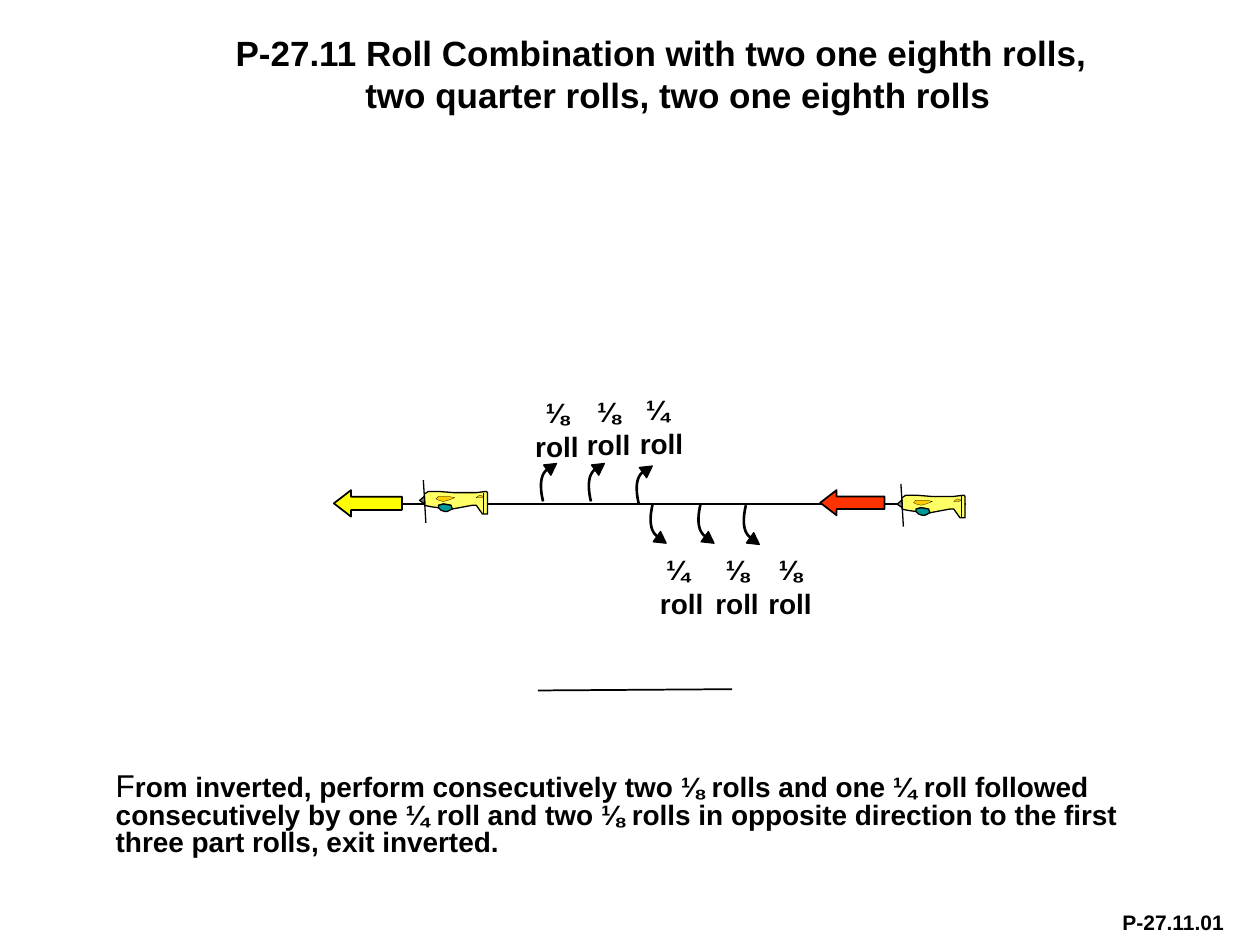
from lxml.etree import SubElement
from pptx import Presentation
from pptx.dml.color import RGBColor
from pptx.enum.shapes import MSO_CONNECTOR, MSO_SHAPE
from pptx.enum.text import PP_ALIGN
from pptx.oxml.ns import qn
from pptx.util import Inches, Pt

BLACK = "000000"
AIRFRAME = [
    (0.16, 0.22), (0.09, 0.21), (0.05, 0.20), (0.05, 0.11), (0.08, 0.09),
    (0.16, 0.09), (0.28, 0.10), (0.46, 0.10), (0.54, 0.09), (0.55, 0.10),
    (0.55, 0.27), (0.51, 0.27), (0.46, 0.20), (0.43, 0.20), (0.27, 0.23),
    (0.25, 0.20), (0.20, 0.19), (0.17, 0.20),
]
CANOPY = [
    (0.27, 0.23), (0.26, 0.20), (0.20, 0.19), (0.16, 0.20), (0.16, 0.22),
    (0.18, 0.24), (0.21, 0.25), (0.23, 0.25),
]
WING = [
    (0.29, 0.14), (0.24, 0.16), (0.20, 0.17), (0.16, 0.16), (0.14, 0.15),
    (0.16, 0.13), (0.20, 0.13), (0.24, 0.13),
]
TAILPLANE = [
    (0.52, 0.13), (0.49, 0.12), (0.47, 0.13), (0.46, 0.14), (0.48, 0.14), (0.50, 0.14),
]


def colour(hex_text):
    """Turn a hex string into a colour."""
    return RGBColor.from_string(hex_text)


def paint(shape, fill, width, line=BLACK):
    """Set fill and outline of a shape and remove its shadow."""
    shape.shadow.inherit = False
    if fill:
        shape.fill.solid()
        shape.fill.fore_color.rgb = colour(fill)
    else:
        shape.fill.background()
    shape.line.color.rgb = colour(line)
    shape.line.width = Pt(width)


def add_line(shapes, start, end, width):
    """Draw a straight black line between two points in inches."""
    ends = [Inches(value) for value in (*start, *end)]
    line = shapes.add_connector(MSO_CONNECTOR.STRAIGHT, *ends)
    line.line.color.rgb = colour(BLACK)
    line.line.width = Pt(width)
    SubElement(line._element.spPr, qn("a:effectLst"))


def add_outline(shapes, left, top, points, fill, width, close=True):
    """Draw a freeform from points relative to left and top."""
    places = [(Inches(left + x), Inches(top + y)) for x, y in points]
    builder = shapes.build_freeform(*places[0])
    builder.add_line_segments(places[1:], close=close)
    paint(builder.convert_to_shape(), fill, width)


def add_preset(shapes, preset, box, fill, width, rotation=0):
    """Draw a preset shape in a box given in inches."""
    shape = shapes.add_shape(preset, *[Inches(value) for value in box])
    paint(shape, fill, width)
    shape.rotation = rotation
    return shape


def add_text(slide, box, text, size, align=PP_ALIGN.LEFT):
    """Add bold Arial text and return its box."""
    text_box = slide.shapes.add_textbox(*[Inches(value) for value in box])
    text_box.text_frame.word_wrap = True
    paragraph = text_box.text_frame.paragraphs[0]
    paragraph.text = text
    paragraph.alignment = align
    for run in paragraph.runs:
        run.font.name = "Arial"
        run.font.size = Pt(size)
        run.font.bold = True
        run.font.color.rgb = colour(BLACK)
    return text_box


def add_title(slide, box):
    """Place the two-line heading, its second line on a tab stop."""
    title = add_text(
        slide, box,
        "P-27.11 Roll Combination with two one eighth rolls,\v"
        "\ttwo quarter rolls, two one eighth rolls", 20)
    title.text_frame.margin_left = Inches(0.16)
    properties = title.text_frame.paragraphs[0]._p.get_or_add_pPr()
    tabs = SubElement(properties, qn("a:tabLst"))
    SubElement(tabs, qn("a:tab"), pos=str(Inches(1.03)), algn="l")


def add_description(slide, box):
    """Place the description with its lighter first letter."""
    description = add_text(slide, box, "F", 18)
    description.fill.solid()
    description.fill.fore_color.rgb = colour("FFFFFF")
    paragraph = description.text_frame.paragraphs[0]
    paragraph.line_spacing = 0.8
    paragraph.runs[0].font.bold = False
    rest = paragraph.add_run()
    rest.text = (
        "rom inverted, perform consecutively two ⅛ rolls and one ¼ roll followed "
        "consecutively by one ¼ roll and two ⅛ rolls in opposite direction to the "
        "first three part rolls, exit inverted.")
    rest.font.name = "Arial"
    rest.font.size = Pt(16)
    rest.font.bold = True
    rest.font.color.rgb = colour(BLACK)


def add_aircraft(slide, left, top):
    """Draw an inverted aircraft from its top left corner."""
    shapes = slide.shapes.add_group_shape().shapes

    def strut(x1, y1, x2, y2):
        """Draw a thin line within the aircraft."""
        add_line(shapes, (left + x1, top + y1), (left + x2, top + y2), 0.75)

    strut(0.04, 0, 0.05, 0.16)
    for points, fill, width in (
            (AIRFRAME, "FFFF66", 0.75), (CANOPY, "009999", 0.75),
            (WING, "FFCC00", 0.13), (TAILPLANE, "FFCC00", 0.13)):
        add_outline(shapes, left, top, points, fill, width)
    strut(0.52, 0.10, 0.52, 0.27)
    add_preset(shapes, MSO_SHAPE.ISOSCELES_TRIANGLE,
               (left, top + 0.14, 0.06, 0.04), "808080", 0.75, 267)
    strut(0.05, 0.17, 0.06, 0.34)


def add_roll_arrow(slide, left, top, direction):
    """Draw a curved arrow, direction -1 for up and 1 for down."""
    shapes = slide.shapes.add_group_shape().shapes
    controls = [(0, 0), (-0.03, 0.13), (-0.02, 0.22), (0.04, 0.26)]
    curve = []
    for step in range(13):
        t = step / 12
        weights = ((1 - t) ** 3, 3 * t * (1 - t) ** 2, 3 * t * t * (1 - t), t ** 3)
        x, y = (sum(w * p[axis] for w, p in zip(weights, controls)) for axis in (0, 1))
        curve.append((x, y * direction))
    add_outline(shapes, left, top, curve, None, 1.5, close=False)
    add_preset(shapes, MSO_SHAPE.ISOSCELES_TRIANGLE,
               (left + 0.02, top + direction * 0.28 - 0.04, 0.1, 0.09),
               BLACK, 0.75, 90 + direction * 35.5)


def add_flight_arrow(slide, box, fill):
    """Draw a block arrow in the direction of flight."""
    arrow = add_preset(slide.shapes, MSO_SHAPE.LEFT_ARROW, box, fill, 1)
    arrow.adjustments[1] = 0.65


def add_figure(slide):
    """Draw the flight line with its rolls, arrows and aircraft."""
    add_line(slide.shapes, (2.93, 4), (7.67, 4), 1)
    add_flight_arrow(slide, (6.51, 3.89, 0.51, 0.2), "FF3300")
    add_flight_arrow(slide, (2.65, 3.89, 0.54, 0.21), "FFFF00")
    for left, top in ((7.11, 3.84), (3.32, 3.81)):
        add_aircraft(slide, left, top)
    rolls = (
        (4.31, 3.98, -1, "⅛", 3.78, 3.09), (4.69, 3.98, -1, "⅛", 4.19, 3.08),
        (5.07, 4, -1, "¼ ", 4.61, 3.07), (5.18, 4, 1, "¼ ", 4.77, 4.34),
        (5.56, 4, 1, "⅛", 5.21, 4.34), (5.92, 4.01, 1, "⅛", 5.63, 4.34))
    for left, top, direction, amount, label_left, label_top in rolls:
        add_roll_arrow(slide, left, top, direction)
        add_text(slide, (label_left, label_top, 1.28, 0.64),
                 f"{amount}\vroll", 16, PP_ALIGN.CENTER)


def main():
    """Build and save the slide."""
    deck = Presentation()
    deck.slide_width, deck.slide_height = Inches(10), Inches(7.5)
    slide = deck.slides.add_slide(deck.slide_layouts[6])
    add_title(slide, (1.71, 0.2, 8.33, 1.06))
    add_text(slide, (8.81, 7.17, 1.03, 0.3), "P-27.11.01", 12).text_frame.word_wrap = False
    add_line(slide.shapes, (4.27, 5.48), (5.81, 5.47), 1)
    add_description(slide, (0.82, 6.09, 8.71, 0.77))
    add_figure(slide)
    deck.save("out.pptx")


if __name__ == "__main__":
    main()
